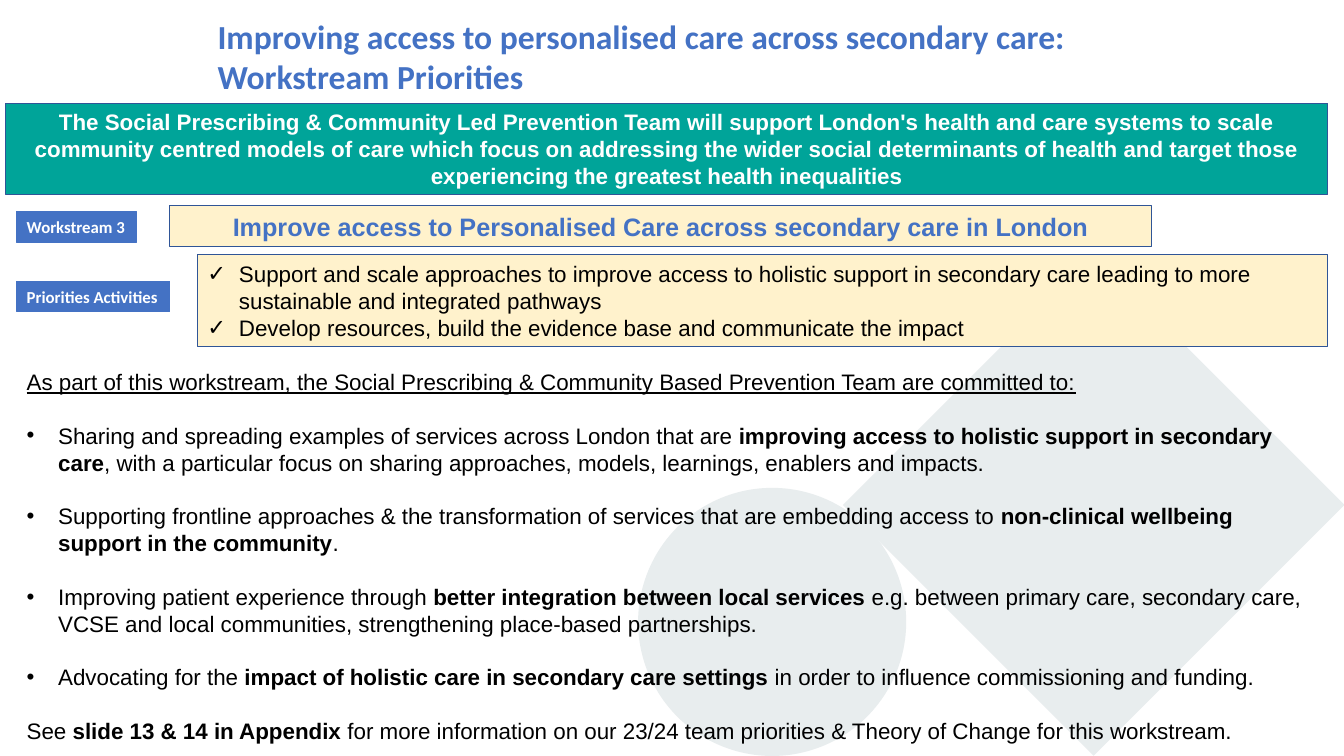
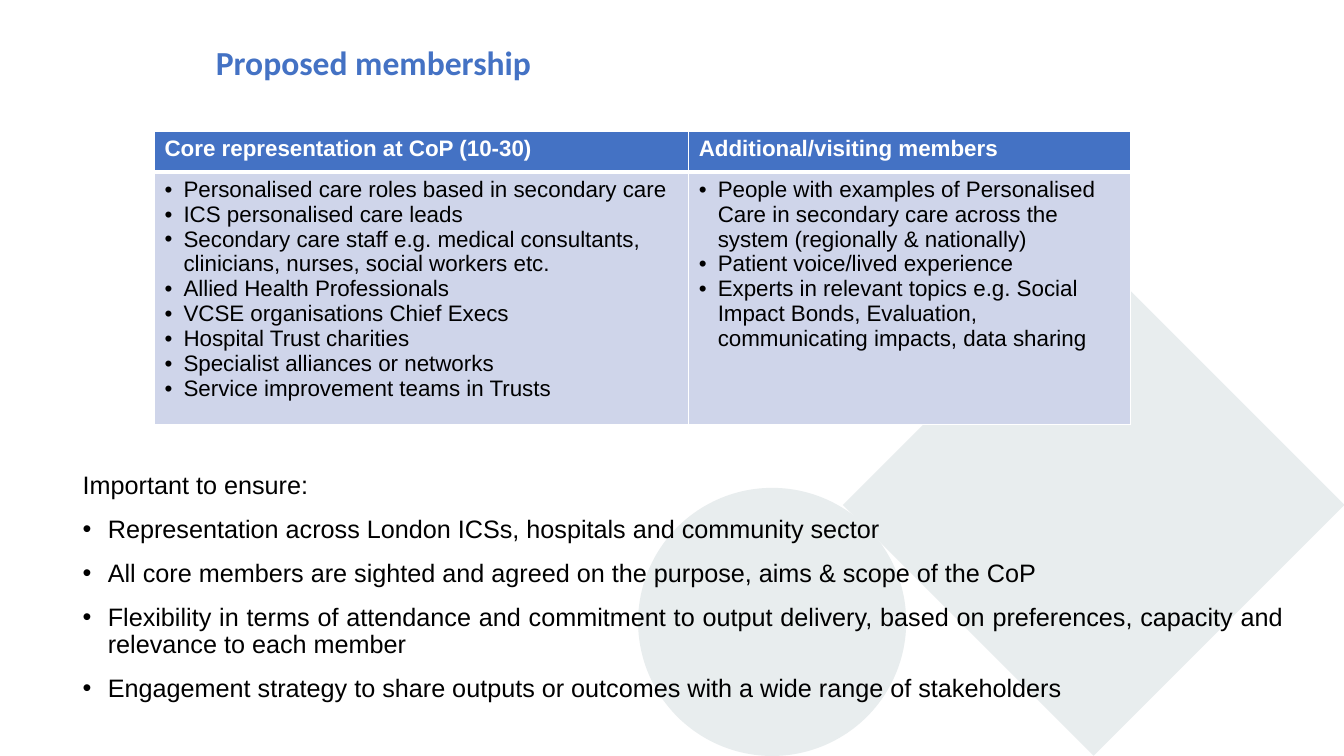
import pptx
import pptx.util
import pptx.dml.color
import pptx.enum.shapes
import pptx.enum.text
import pptx.oxml.ns
import lxml.etree

Pt = pptx.util.Pt
RGB = pptx.dml.color.RGBColor
Kind = pptx.enum.shapes.MSO_SHAPE
Align = pptx.enum.text.PP_ALIGN
Anchor = pptx.enum.text.MSO_ANCHOR
qn = pptx.oxml.ns.qn

WHITE = RGB(0xFF, 0xFF, 0xFF)
BLACK = RGB(0, 0, 0)
BLUE = RGB(0x44, 0x72, 0xC4)
NAVY = RGB(0x2F, 0x55, 0x97)
TEAL = RGB(0x00, 0xA4, 0x99)
CREAM = RGB(0xFF, 0xF2, 0xCC)
PALE = RGB(0xCF, 0xD5, 0xEA)
MIST = RGB(0xE8, 0xED, 0xEE)

# Content of slide 1
AIM = ("The Social Prescribing & Community Led Prevention Team will support London's "
       "health and care systems to scale community centred models of care which focus on "
       "addressing the wider social determinants of health and target those experiencing "
       "the greatest health inequalities")
GOAL = "Improve access to Personalised Care across secondary care in London"
TASKS = [
    "Support and scale approaches to improve access to holistic support in secondary care "
    "leading to more sustainable and integrated pathways",
    "Develop resources, build the evidence base and communicate the impact",
]
# Tag text, top, width
TAGS = [("Workstream 3", 151.2, 85.7), ("Priorities Activities", 200.9, 109.4)]
INTRO = ("As part of this workstream, the Social Prescribing & Community Based Prevention "
         "Team are committed to:")
# Every second part is bold
PLEDGES = [
    ("Sharing and spreading examples of services across London that are ",
     "improving access to holistic support in secondary care",
     ", with a particular focus on sharing approaches, models, learnings, enablers "
     "and impacts."),
    ("Supporting frontline approaches & the transformation of services that are embedding "
     "access to ", "non-clinical wellbeing support in the community", "."),
    ("Improving patient experience through ",
     "better integration between local services",
     " e.g. between primary care, secondary care, VCSE and local communities, "
     "strengthening place-based partnerships."),
    ("Advocating for the ", "impact of holistic care in secondary care settings ",
     "in order to influence commissioning and funding."),
]
CLOSE = ("See ", "slide 13 & 14 in Appendix ",
         "for more information on our 23/24 team priorities & Theory of Change for this "
         "workstream.")

# Content of slide 2: heading, column width, members
GROUPS = [
    ("Core representation at CoP (10-30)", 381.6, [
        "Personalised care roles based in secondary care",
        "ICS personalised care leads",
        "Secondary care staff e.g. medical consultants, clinicians, nurses, social "
        "workers etc.",
        "Allied Health Professionals",
        "VCSE organisations Chief Execs",
        "Hospital Trust charities",
        "Specialist alliances or networks",
        "Service improvement teams in Trusts"]),
    ("Additional/visiting members", 315.4, [
        "People with examples of Personalised Care in secondary care across the system "
        "(regionally & nationally)",
        "Patient voice/lived experience",
        "Experts in relevant topics e.g. Social Impact Bonds, Evaluation, communicating "
        "impacts, data sharing"]),
]
NEEDS = [
    "Important to ensure:",
    "Representation across London ICSs, hospitals and community sector",
    "All core members are sighted and agreed on the purpose, aims & scope of the CoP",
    "Flexibility in terms of attendance and commitment to output delivery, based on "
    "preferences, capacity and relevance to each member",
    "Engagement strategy to share outputs or outcomes with a wide range of stakeholders",
]


def shape(slide, kind, box, fill, line=None):
    item = slide.shapes.add_shape(kind, *map(Pt, box))
    item.shadow.inherit = False
    item.fill.solid()
    item.fill.fore_color.rgb = fill
    if line is None:
        item.line.fill.background()
    else:
        item.line.color.rgb = line
        item.line.width = Pt(0.75)
    return item


def panel(slide, box, fill, line):
    frame = shape(slide, Kind.RECTANGLE, box, fill, line).text_frame
    frame.word_wrap = True
    frame.vertical_anchor = Anchor.MIDDLE
    return frame


def label(slide, box, wrap=True):
    frame = slide.shapes.add_textbox(*map(Pt, box)).text_frame
    frame.word_wrap = wrap
    return frame


def write(frame, parts, size=16, color=BLACK, face="Arial", bold=False, under=False,
          align=Align.LEFT, mark=None, indent=0, before=0, after=0, pitch=None):
    """Add one paragraph; with several parts, every second one is bold."""
    para = frame.paragraphs[0]
    if para.runs:
        para = frame.add_paragraph()
        para.space_before = Pt(before)
    para.space_after = Pt(after)
    para.alignment = align
    if pitch:
        para.line_spacing = pitch
    props = para._p.get_or_add_pPr()
    props.set("marL", str(int(Pt(indent))))
    if mark:
        props.set("indent", str(-int(Pt(indent))))
        lxml.etree.SubElement(props, qn("a:buFont")).set("typeface", "Arial")
        lxml.etree.SubElement(props, qn("a:buChar")).set("char", mark)
    for spot, text in enumerate([parts] if isinstance(parts, str) else parts):
        run = para.add_run()
        run.text = text
        font = run.font
        font.name, font.size = face, Pt(size)
        font.bold = bold or spot % 2 == 1
        font.underline = under
        font.color.rgb = color


def edge(cell, **widths):
    """Give a cell white borders of the stated widths."""
    props = cell._tc.get_or_add_tcPr()
    for spot, side in enumerate(("lnL", "lnR", "lnT", "lnB")):
        line = lxml.etree.Element(qn("a:" + side), w=str(int(Pt(widths.get(side, 1)))))
        fill = lxml.etree.SubElement(line, qn("a:solidFill"))
        lxml.etree.SubElement(fill, qn("a:srgbClr")).set("val", str(WHITE))
        props.insert(spot, line)


def start(deck, title, box, wrap=True):
    """Add a slide with the shared background shapes and title style."""
    slide = deck.slides.add_slide(deck.slide_layouts[6])
    shape(slide, Kind.OVAL, (455.8, 348.5, 191.5, 191.5), MIST)
    shape(slide, Kind.RECTANGLE, (654.5, 234, 253.4, 253.4), MIST).rotation = 45
    write(label(slide, box, wrap), title, 24, BLUE, "Calibri", True, indent=7.2)
    return slide


def plan(deck):
    slide = start(deck, "Improving access to personalised care across secondary care: "
                  "Workstream Priorities", (141.1, 7.9, 717, 65.5))
    # Aim, goal and task panels
    write(panel(slide, (4.1, 73.7, 944.2, 65.2), TEAL, NAVY), AIM, color=WHITE,
          bold=True, align=Align.CENTER)
    write(panel(slide, (121, 146.8, 701.8, 29.1), CREAM, NAVY), GOAL, 18, BLUE,
          bold=True, align=Align.CENTER)
    frame = panel(slide, (141.1, 181.9, 807, 65.5), CREAM, NAVY)
    for task in TASKS:
        write(frame, task, mark="✓", indent=22.5)
    # Tags on the left
    for text, top, width in TAGS:
        frame = panel(slide, (12, top, width, 21.8), BLUE, BLUE)
        frame.word_wrap = False
        write(frame, text, 12, WHITE, "Calibri", True)
    # Pledges, one line apart
    frame = label(slide, (12, 259.4, 936, 280))
    write(frame, INTRO, under=True)
    for pledge in PLEDGES:
        write(frame, pledge, mark="•", indent=22.5, before=19.2)
    write(frame, CLOSE, before=19.2)


def members(deck):
    slide = start(deck, "Proposed membership", (139.9, 26.6, 249.1, 36.4), False)
    # Membership table
    heights = (29.2, 180)
    wide = sum(group[1] for group in GROUPS)
    table = slide.shapes.add_table(2, len(GROUPS), Pt(110.4), Pt(93.8), Pt(wide),
                                   Pt(sum(heights))).table
    for row, height in zip(table.rows, heights):
        row.height = Pt(height)
    for col, (head, width, names) in enumerate(GROUPS):
        table.columns[col].width = Pt(width)
        top, body = table.cell(0, col), table.cell(1, col)
        for cell, fill in ((top, BLUE), (body, PALE)):
            cell.fill.solid()
            cell.fill.fore_color.rgb = fill
        edge(top, lnB=3)
        edge(body, lnT=3)
        write(top.text_frame, head, color=WHITE, bold=True)
        for name in names:
            write(body.text_frame, name, mark="•", indent=13.5, pitch=Pt(17.75))
    # Needs below the table
    frame = label(slide, (52, 334, 872, 200))
    for spot, need in enumerate(NEEDS):
        write(frame, need, 18, align=Align.JUSTIFY, mark="•" if spot else None,
              indent=18 if spot else 0, before=6, after=6, pitch=0.9)


def main():
    deck = pptx.Presentation()
    deck.slide_width, deck.slide_height = Pt(960), Pt(540)
    plan(deck)
    members(deck)
    deck.save("out.pptx")


if __name__ == "__main__":
    main()
